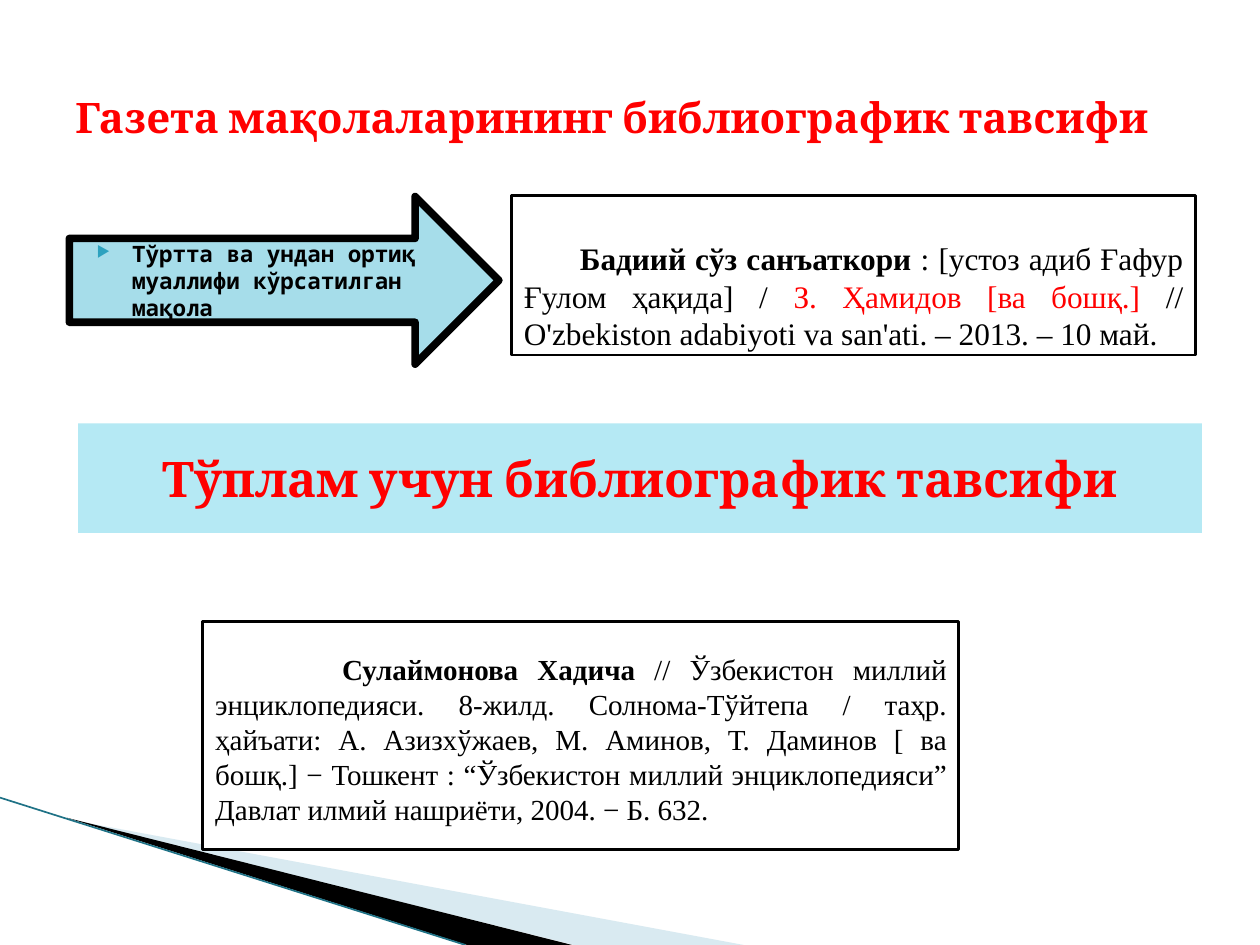
"""Build a slide on bibliographic descriptions of newspaper articles and collections."""
from dataclasses import dataclass

from lxml import etree
from pptx import Presentation
from pptx.dml.color import RGBColor
from pptx.enum import shapes, text
from pptx.oxml.ns import qn
from pptx.util import Pt

RED = RGBColor(0xFF, 0, 0)
BLACK = RGBColor(0, 0, 0)
WHITE = RGBColor(0xFF, 0xFF, 0xFF)
SKY = RGBColor(0xA6, 0xDD, 0xEA)
PALE = RGBColor(0xB5, 0xE9, 0xF4)
MIST = RGBColor(0xA0, 0xCB, 0xDC)
TEAL = RGBColor(0x1F, 0x72, 0x86)
KIND = shapes.MSO_SHAPE
ALIGN = text.PP_ALIGN


@dataclass
class Run:
    """A stretch of text in one style."""
    words: str
    bold: bool = False
    color: RGBColor = BLACK


@dataclass
class Box:
    """A filled shape holding one paragraph."""
    area: tuple
    runs: list
    font: str
    size: float
    fill: RGBColor | None = None
    edge: float = 0
    kind: int = KIND.RECTANGLE
    align: int = ALIGN.LEFT
    anchor: int = text.MSO_ANCHOR.MIDDLE
    top: float = 3.6
    left: float = 0
    indent: float = 0
    lead: float = 0
    bullet: str = ""


def add_bullet(para, mark: str) -> None:
    """Put a coloured bullet on the paragraph."""
    props = para._p.get_or_add_pPr()
    color = etree.SubElement(props, qn("a:buClr"))
    etree.SubElement(color, qn("a:srgbClr"), val="2DA2BF")
    etree.SubElement(props, qn("a:buSzPct"), val="68000")
    etree.SubElement(props, qn("a:buChar"), char=mark)


def add_box(slide, box: Box) -> None:
    """Draw a box with its text."""
    area = [Pt(n) for n in box.area]
    if box.fill is None:
        shape = slide.shapes.add_textbox(*area)
    else:
        shape = slide.shapes.add_shape(box.kind, *area)
        shape.shadow.inherit = False
        shape.fill.solid()
        shape.fill.fore_color.rgb = box.fill
        if box.edge:
            shape.line.color.rgb = BLACK
            shape.line.width = Pt(box.edge)
        else:
            shape.line.fill.background()
    frame = shape.text_frame
    frame.word_wrap = True
    frame.vertical_anchor = box.anchor
    frame.margin_top = Pt(box.top)
    para = frame.paragraphs[0]
    para.alignment = box.align
    if box.lead:
        para.line_spacing = Pt(box.lead)
    props = para._p.get_or_add_pPr()
    props.set("marL", str(Pt(box.left)))
    props.set("indent", str(Pt(box.indent)))
    if box.bullet:
        add_bullet(para, box.bullet)
    for item in box.runs:
        run = para.add_run()
        run.text = item.words
        run.font.name = box.font
        run.font.size = Pt(box.size)
        run.font.bold = item.bold
        run.font.color.rgb = item.color


def add_wedge(slide, points: list, color: RGBColor, alpha: int = 100) -> None:
    """Draw a filled corner wedge."""
    first, *rest = [(Pt(x), Pt(y)) for x, y in points]
    pen = slide.shapes.build_freeform(*first)
    pen.add_line_segments(rest)
    shape = pen.convert_to_shape()
    shape.shadow.inherit = False
    shape.fill.solid()
    shape.fill.fore_color.rgb = color
    shape.line.fill.background()
    if alpha < 100:
        tint = shape._element.spPr.find(".//" + qn("a:srgbClr"))
        etree.SubElement(tint, qn("a:alpha"), val=str(alpha * 1000))


def add_edge(slide, start: tuple, end: tuple) -> None:
    """Draw the thin corner line."""
    ends = [Pt(n) for n in start + end]
    line = slide.shapes.add_connector(shapes.MSO_CONNECTOR.STRAIGHT, *ends)
    line.line.color.rgb = TEAL
    line.line.width = Pt(0.95)
    etree.SubElement(line._element.spPr, qn("a:effectLst"))


TITLE = Box((36, 21.6, 648, 90),
            [Run("Газета мақолаларининг библиографик тавсифи", True, RED)],
            "Cambria", 24)
ARROW = Box((39.6, 112.3, 245.5, 95.8),
            [Run("Тўртта ва ундан ортиқ муаллифи кўрсатилган мақола", True)],
            "Noto Sans Mono", 12.9, SKY, 4.33, KIND.RIGHT_ARROW,
            left=28.8, indent=-20.2, lead=15.4, bullet="▶")
PRESS = Box((292.3, 111.6, 391, 91.4),
            [Run("Бадиий сўз санъаткори", True),
             Run(" : [устоз адиб Ғафур Ғулом ҳақида] / "),
             Run("З. Ҳамидов [ва бошқ.]", color=RED),
             Run(" // O'zbekiston adabiyoti va san'ati. – 2013. – 10 май.")],
            "Times New Roman", 17.9, WHITE, 1.5, align=ALIGN.JUSTIFY,
            anchor=text.MSO_ANCHOR.TOP, top=25.2, indent=32, lead=21.4)
BANNER = Box((44.6, 241.9, 642.2, 62.6),
             [Run("Тўплам учун библиографик тавсифи", True, RED)],
             "Cambria", 28, PALE, align=ALIGN.CENTER)
VOLUME = Box((115.9, 355, 432, 130.3),
             [Run("Сулаймонова Хадича ", True),
              Run("// Ўзбекистон миллий энциклопедияси. 8-жилд. "
                  "Солнома-Тўйтепа / таҳр. ҳайъати: А. Азизхўжаев, "
                  "М. Аминов, Т. Даминов [ ва бошқ.] − Тошкент : "
                  "“Ўзбекистон миллий энциклопедияси” Давлат илмий "
                  "нашриёти, 2004. − Б. 632.")],
             "Times New Roman", 16.6, WHITE, 1.5, align=ALIGN.JUSTIFY,
             anchor=text.MSO_ANCHOR.TOP, top=17.2, indent=72.6, lead=20)


def main() -> None:
    """Build and save the slide."""
    deck = Presentation()
    deck.slide_width, deck.slide_height = Pt(720), Pt(540)
    slide = deck.slides.add_slide(deck.slide_layouts[6])
    add_wedge(slide, [(39.6, 468.4), (425, 540), (328, 540)], MIST, 40)
    add_wedge(slide, [(38.2, 467.3), (327, 540), (267, 540)], BLACK)
    add_edge(slide, (0, 455.8), (266, 540))
    for box in (TITLE, ARROW, PRESS, BANNER, VOLUME):
        add_box(slide, box)
    deck.save("out.pptx")


if __name__ == "__main__":
    main()
